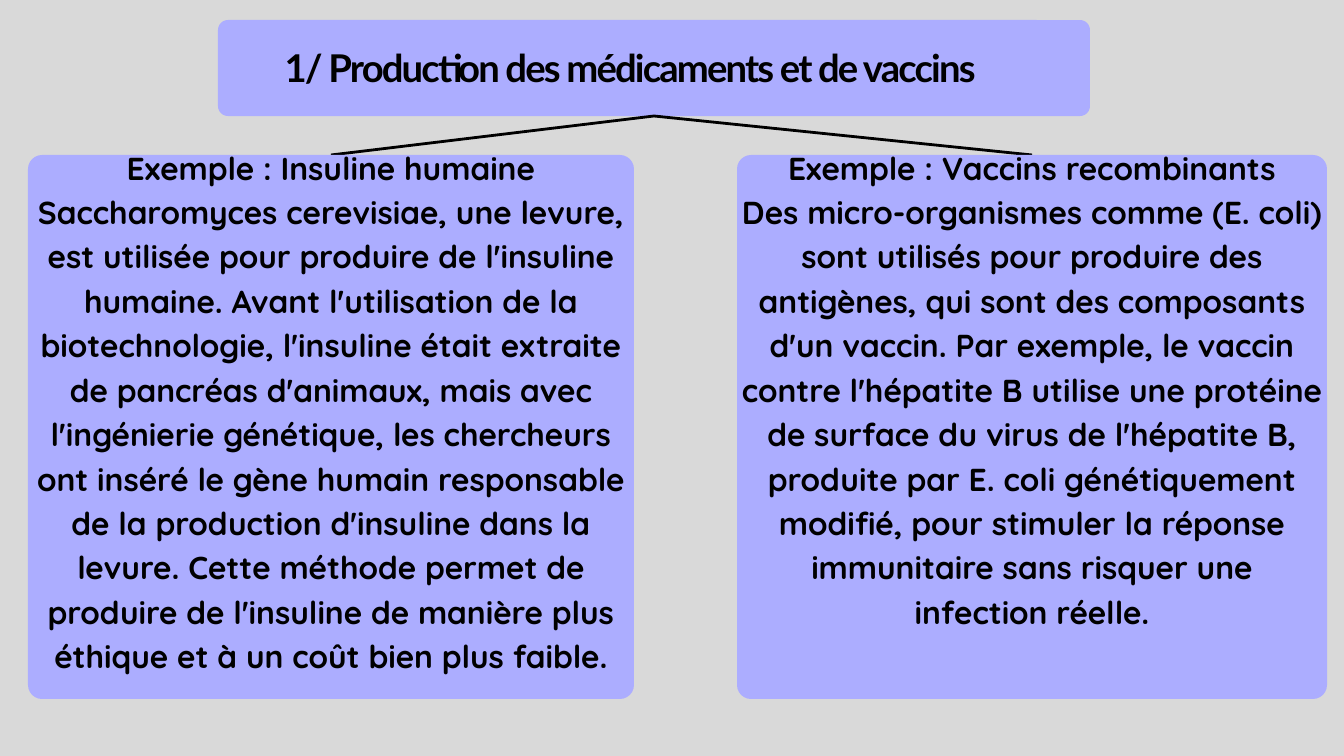
import pptx
import pptx.dml.color
import pptx.enum.shapes
import pptx.enum.text
import pptx.util
from lxml import etree

TITLE = "1/ Production des médicaments et de vaccins "
EXAMPLES = [
    {
        "left": 28,
        "width": 606,
        "paragraphs": [
            "Exemple : Insuline humaine",
            "Saccharomyces cerevisiae, une levure, est utilisée pour produire de "
            "l'insuline humaine. Avant l'utilisation de la biotechnologie, l'insuline "
            "était extraite de pancréas d'animaux, mais avec l'ingénierie génétique, "
            "les chercheurs ont inséré le gène humain responsable de la production "
            "d'insuline dans la levure. Cette méthode permet de produire de l'insuline "
            "de manière plus éthique et à un coût bien plus faible.",
        ],
    },
    {
        "left": 737,
        "width": 590,
        "paragraphs": [
            "Exemple : Vaccins recombinants",
            "Des micro-organismes comme (E. coli) sont utilisés pour produire des "
            "antigènes, qui sont des composants d'un vaccin. Par exemple, le vaccin "
            "contre l'hépatite B utilise une protéine de surface du virus de "
            "l'hépatite B, produite par E. coli génétiquement modifié, pour stimuler "
            "la réponse immunitaire sans risquer une infection réelle.",
        ],
    },
]

THEME = {
    "background": "D9D9D9",
    "panel": "ACADFF",
    "ink": "000000",
    "rule": 3,
    "title": {"name": "Lato", "size": 41, "leading": 43, "tracking": -200},
    "body": {"name": "Quicksand", "size": 34, "leading": 47.6, "tracking": 0},
}

SLIDE_W, SLIDE_H = 1344, 756
HEADER = (218, 20, 872, 96)
TITLE_AREA = (225, 50, 818, 40)
CARD_TOP, CARD_H = 155, 544
BODY_TOP, BODY_H = 142, 557
HEADER_RADIUS, CARD_RADIUS = 10, 14
BODY_INSET = 4


def px(length):
    return pptx.util.Emu(round(length * pptx.util.Inches(20) / SLIDE_W))


def color(key):
    return pptx.dml.color.RGBColor.from_string(THEME[key])


def apply(target, values):
    for key, value in values.items():
        setattr(target, key, value)


def add_panel(slide, area, radius):
    panel = slide.shapes.add_shape(
        pptx.enum.shapes.MSO_SHAPE.ROUNDED_RECTANGLE, *map(px, area)
    )
    panel.adjustments[0] = radius / min(area[2:])
    panel.shadow.inherit = False
    panel.fill.solid()
    panel.fill.fore_color.rgb = color("panel")
    panel.line.fill.background()


def add_branch(slide, start, end):
    branch = slide.shapes.add_connector(
        pptx.enum.shapes.MSO_CONNECTOR.STRAIGHT, *map(px, start + end)
    )
    branch.line.width = pptx.util.Pt(THEME["rule"])
    branch.line.color.rgb = color("ink")
    etree.SubElement(branch._element.spPr, pptx.oxml.ns.qn("a:effectLst"))


def add_text(slide, area, paragraphs, style, inset, wrap_side):
    frame = slide.shapes.add_textbox(*map(px, area)).text_frame
    apply(frame, {
        "word_wrap": True,
        "vertical_anchor": pptx.enum.text.MSO_ANCHOR.TOP,
        "margin_left": px(wrap_side),
        "margin_right": px(wrap_side),
        "margin_top": px(inset),
        "margin_bottom": px(inset),
    })
    for index, wording in enumerate(paragraphs):
        paragraph = frame.add_paragraph() if index else frame.paragraphs[0]
        apply(paragraph, {
            "alignment": pptx.enum.text.PP_ALIGN.CENTER,
            "line_spacing": pptx.util.Pt(style["leading"]),
        })
        run = paragraph.add_run()
        run.text = wording
        apply(run.font, {
            "name": style["name"],
            "size": pptx.util.Pt(style["size"]),
            "bold": True,
        })
        run.font.color.rgb = color("ink")
        if style["tracking"]:
            run._r.get_or_add_rPr().set("spc", str(style["tracking"]))


def main():
    deck = pptx.Presentation()
    apply(deck, {"slide_width": px(SLIDE_W), "slide_height": px(SLIDE_H)})
    slide = deck.slides.add_slide(deck.slide_layouts[6])
    slide.background.fill.solid()
    slide.background.fill.fore_color.rgb = color("background")

    left, top, width, height = HEADER
    header_foot = (left + width // 2, top + height)
    add_panel(slide, HEADER, HEADER_RADIUS)
    for example in EXAMPLES:
        left, width = example["left"], example["width"]
        add_branch(slide, (left + width // 2, CARD_TOP), header_foot)
        add_panel(slide, (left, CARD_TOP, width, CARD_H), CARD_RADIUS)
        add_text(slide, (left, BODY_TOP, width, BODY_H), example["paragraphs"],
                 THEME["body"], 0, BODY_INSET)
    add_text(slide, TITLE_AREA, [TITLE], THEME["title"], 0, 0)
    deck.save("out.pptx")


if __name__ == "__main__":
    main()
